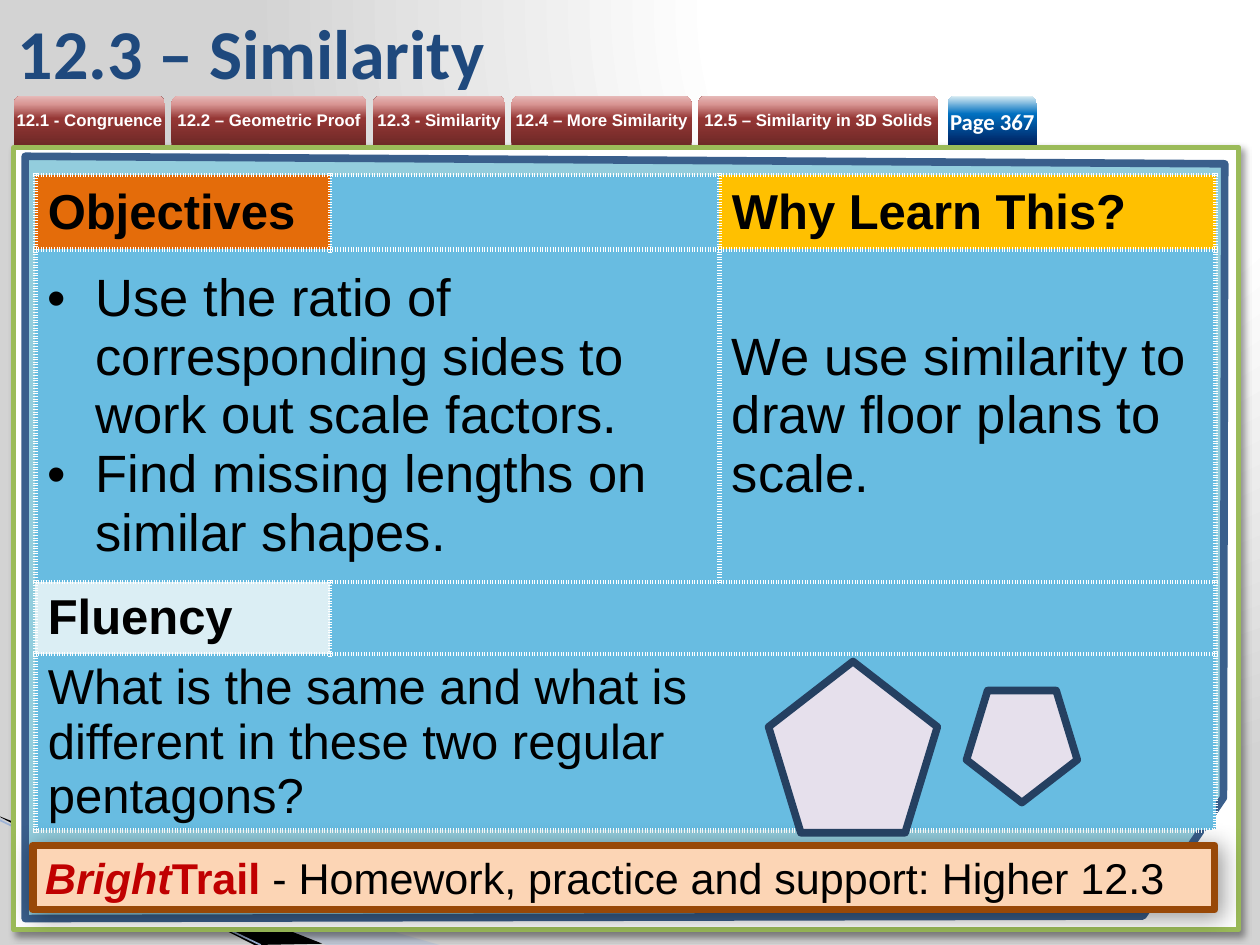
from pptx import Presentation
from pptx.util import Inches, Pt
from pptx.dml.color import RGBColor
from pptx.enum.shapes import MSO_SHAPE, MSO_CONNECTOR
from pptx.enum.text import PP_ALIGN, MSO_ANCHOR
from pptx.oxml import parse_xml
from pptx.oxml.ns import nsdecls, qn

# Content
TITLE = "12.3 – Similarity"
TABS = [  # text, left, width
    ("12.1 - Congruence", 0.11, 1.2),
    ("12.2 – Geometric Proof", 1.36, 1.55),
    ("12.3 - Similarity", 2.96, 1.05),
    ("12.4 – More Similarity", 4.06, 1.43),
    ("12.5 – Similarity in 3D Solids", 5.54, 1.91),
]
PAGE_TAB = ("Page 367", 7.52, 0.71)
COLS = [2.34, 3.09, 3.94]
ROWS = [0.59, 2.64, 0.57, 1.4]
HEADINGS = [  # row, column, text, fill
    (0, 0, "Objectives", "E46C0A"),
    (0, 2, "Why Learn This?", "FFC000"),
    (2, 0, "Fluency", "DBEEF4"),
]
OBJECTIVES = ["Use the ratio of corresponding sides to work out scale factors.",
              "Find missing lengths on similar shapes."]
REASON = "We use similarity to draw floor plans to scale."
QUESTION = "What is the same and what is\ndifferent in these two regular\npentagons?"
SUPPORT = [("Bright", dict(color="C00000", bold=True, italic=True)),
           ("Trail ", dict(color="C00000", bold=True)),
           ("- Homework, practice and support: Higher 12.3", {})]
MERGES = [((1, 0), (1, 1)), ((2, 1), (2, 2)), ((3, 0), (3, 2))]
PENTAGONS = [(6.1, 5.25, 1.34, 1.36, 0), (7.67, 5.48, 0.88, 0.89, 180)]

RED_STOPS = [(0, "6F2927"), (54, "953735"), (83, "D99694"), (100, "E6B9B8")]
BLUE_STOPS = [(0, "002060"), (63, "0070C0"), (100, "DBEEF4")]
BACK_STOPS = [(0, "FFFFFF"), (40, "FFFFFF"), (100, "D3D3D3")]
CELL_BLUE = "68BCE1"


def rgb(color):
    return RGBColor.from_string(color)


def add_text(p, text, size=28, font="Arial", color="000000", bold=False, italic=False):
    for i, line in enumerate(text.split("\n")):
        if i:
            p.add_line_break()
        r = p.add_run()
        r.text = line
        f = r.font
        f.size, f.name, f.bold, f.italic = Pt(size), font, bold, italic
        f.color.rgb = rgb(color)


def gradient(stops, direction):
    gs = "".join(f'<a:gs pos="{pos * 1000}"><a:srgbClr val="{c}"/></a:gs>' for pos, c in stops)
    return parse_xml(f'<a:gradFill {nsdecls("a")} rotWithShape="1"><a:gsLst>{gs}</a:gsLst>'
                     f'{direction}</a:gradFill>')


def set_gradient(fill, parent, stops, direction):
    fill.solid()
    old = parent.find(qn("a:solidFill"))
    parent.replace(old, gradient(stops, direction))


def style(sp, fill=None, line=None, weight=1):
    sp.shadow.inherit = False
    if fill:
        sp.fill.solid()
        sp.fill.fore_color.rgb = rgb(fill)
    if line:
        sp.line.color.rgb = rgb(line)
        sp.line.width = Pt(weight)
    else:
        sp.line.fill.background()
    return sp


def add_shape(kind, left, top, width, height, **look):
    sp = s.shapes.add_shape(kind, Inches(left), Inches(top), Inches(width), Inches(height))
    return style(sp, **look)


def add_outline(points, **look):
    (x, y), *rest = points
    builder = s.shapes.build_freeform(Inches(x), Inches(y))
    builder.add_line_segments([(Inches(a), Inches(b)) for a, b in rest], close=True)
    return style(builder.convert_to_shape(), **look)


def add_shadow(sp, blur, dist):
    sp._element.spPr.find(qn("a:effectLst")).append(parse_xml(
        f'<a:outerShdw {nsdecls("a")} blurRad="{Pt(blur)}" dist="{Pt(dist)}" dir="2700000" '
        'algn="tl" rotWithShape="0"><a:srgbClr val="000000"><a:alpha val="40000"/>'
        '</a:srgbClr></a:outerShdw>'))


def add_tab(text, left, width, stops, line_pt=None, **fmt):
    sp = add_shape(MSO_SHAPE.ROUND_2_SAME_RECTANGLE, left, 0.76, width, 0.39)
    set_gradient(sp.fill, sp._element.spPr, stops, '<a:lin ang="16200000" scaled="0"/>')
    tf = sp.text_frame
    tf.margin_left = tf.margin_right = tf.margin_top = tf.margin_bottom = 0
    tf.vertical_anchor = MSO_ANCHOR.MIDDLE
    p = tf.paragraphs[0]
    p.alignment = PP_ALIGN.CENTER
    if line_pt:
        p.line_spacing = Pt(line_pt)
    add_text(p, text, color="FFFFFF", bold=True, **fmt)


def add_bullet(p):
    pPr = p._p.get_or_add_pPr()
    pPr.set("marL", str(Inches(0.38)))
    pPr.set("indent", str(-Inches(0.38)))
    pPr.append(parse_xml(f'<a:buFont {nsdecls("a")} typeface="Arial"/>'))
    pPr.append(parse_xml(f'<a:buChar {nsdecls("a")} char="•"/>'))


def format_cell(cell, fill):
    tcPr = cell._tc.get_or_add_tcPr()
    for side in ("lnL", "lnR", "lnT", "lnB"):
        tcPr.append(parse_xml(
            f'<a:{side} {nsdecls("a")} w="{Pt(3)}"><a:solidFill><a:srgbClr val="FFFFFF"/>'
            f'</a:solidFill><a:prstDash val="sysDot"/></a:{side}>'))
    cell.fill.solid()
    cell.fill.fore_color.rgb = rgb(fill)
    cell.vertical_anchor = MSO_ANCHOR.MIDDLE


prs = Presentation()
prs.slide_width, prs.slide_height = Inches(10), Inches(7.5)
s = prs.slides.add_slide(prs.slide_layouts[5])

# Background
back = s.background.fill
back.solid()
set_gradient(back, s._element.cSld.bg.bgPr, BACK_STOPS,
             '<a:path path="circle"><a:fillToRect l="65000" t="0" r="0" b="98000"/></a:path>')

# Corner wedges and line
wedge = add_outline([(0, 6.5), (3.49, 7.5), (2.59, 7.5), (0, 6.49)], fill="A7B9DB")
wedge._element.spPr.find(qn("a:solidFill"))[0].append(
    parse_xml(f'<a:alpha {nsdecls("a")} val="40000"/>'))
add_outline([(0, 6.48), (2.56, 7.49), (2.02, 7.5), (0.01, 6.49)], fill="000000")
line = s.shapes.add_connector(MSO_CONNECTOR.STRAIGHT, 0, Inches(6.51), Inches(2.07), Inches(7.5))
line.line.color.rgb = rgb("9EB3D6")
line.line.width = Pt(0.95)
line._element.spPr.append(parse_xml(f'<a:effectLst {nsdecls("a")}/>'))

# Framed card
frame = add_shape(MSO_SHAPE.RECTANGLE, 0.11, 1.17, 9.72, 6.21,
                  fill="FFFFFF", line="9BBB59", weight=3)
add_shadow(frame, 4, 3)
add_outline([(0.2, 1.24), (9.72, 1.3), (9.71, 6.33), (9.07, 7.27), (0.2, 7.29)],
            fill="93CDDD", line="3A5F8C", weight=4.33)

# Title and tabs
title = s.shapes.title
title.left, title.top, title.width, title.height = map(Inches, (0.04, 0.05, 8.27, 0.71))
title.text_frame.vertical_anchor = MSO_ANCHOR.MIDDLE
p = title.text_frame.paragraphs[0]
p.alignment = PP_ALIGN.LEFT
add_text(p, TITLE, size=40, font="Calibri", color="1F497D", bold=True)
for tab in TABS:
    add_tab(*tab, RED_STOPS, line_pt=10, size=9.6)
add_tab(*PAGE_TAB, BLUE_STOPS, size=13, font="Calibri")

# Lesson table
table = s.shapes.add_table(len(ROWS), len(COLS), Inches(0.28), Inches(1.39),
                           Inches(sum(COLS)), Inches(sum(ROWS))).table
for col, width in zip(table.columns, COLS):
    col.width = Inches(width)
for row, height in zip(table.rows, ROWS):
    row.height = Inches(height)
fills = {(r, c): fill for r, c, _, fill in HEADINGS}
for r in range(len(ROWS)):
    for c in range(len(COLS)):
        format_cell(table.cell(r, c), fills.get((r, c), CELL_BLUE))
for first, last in MERGES:
    table.cell(*first).merge(table.cell(*last))
for r, c, text, _ in HEADINGS:
    add_text(table.cell(r, c).text_frame.paragraphs[0], text, bold=True)
tf = table.cell(1, 0).text_frame
for i, text in enumerate(OBJECTIVES):
    p = tf.add_paragraph() if i else tf.paragraphs[0]
    add_bullet(p)
    add_text(p, text, size=30)
add_text(table.cell(1, 2).text_frame.paragraphs[0], REASON, size=30)
add_text(table.cell(3, 0).text_frame.paragraphs[0], QUESTION)

# Support banner
banner = add_shape(MSO_SHAPE.RECTANGLE, 0.26, 6.71, 9.38, 0.51,
                   fill="FCD5B5", line="984807", weight=4.33)
add_shadow(banner, 13, 3)
tf = banner.text_frame
tf.word_wrap = True
tf.vertical_anchor = MSO_ANCHOR.MIDDLE
p = tf.paragraphs[0]
p.alignment = PP_ALIGN.LEFT
for text, fmt in SUPPORT:
    add_text(p, text, size=24.6, **fmt)

# Pentagons
for *box, turn in PENTAGONS:
    sp = add_shape(MSO_SHAPE.REGULAR_PENTAGON, *box, fill="E6E0EC", line="254061", weight=4.33)
    sp.rotation = turn

prs.save("out.pptx")
